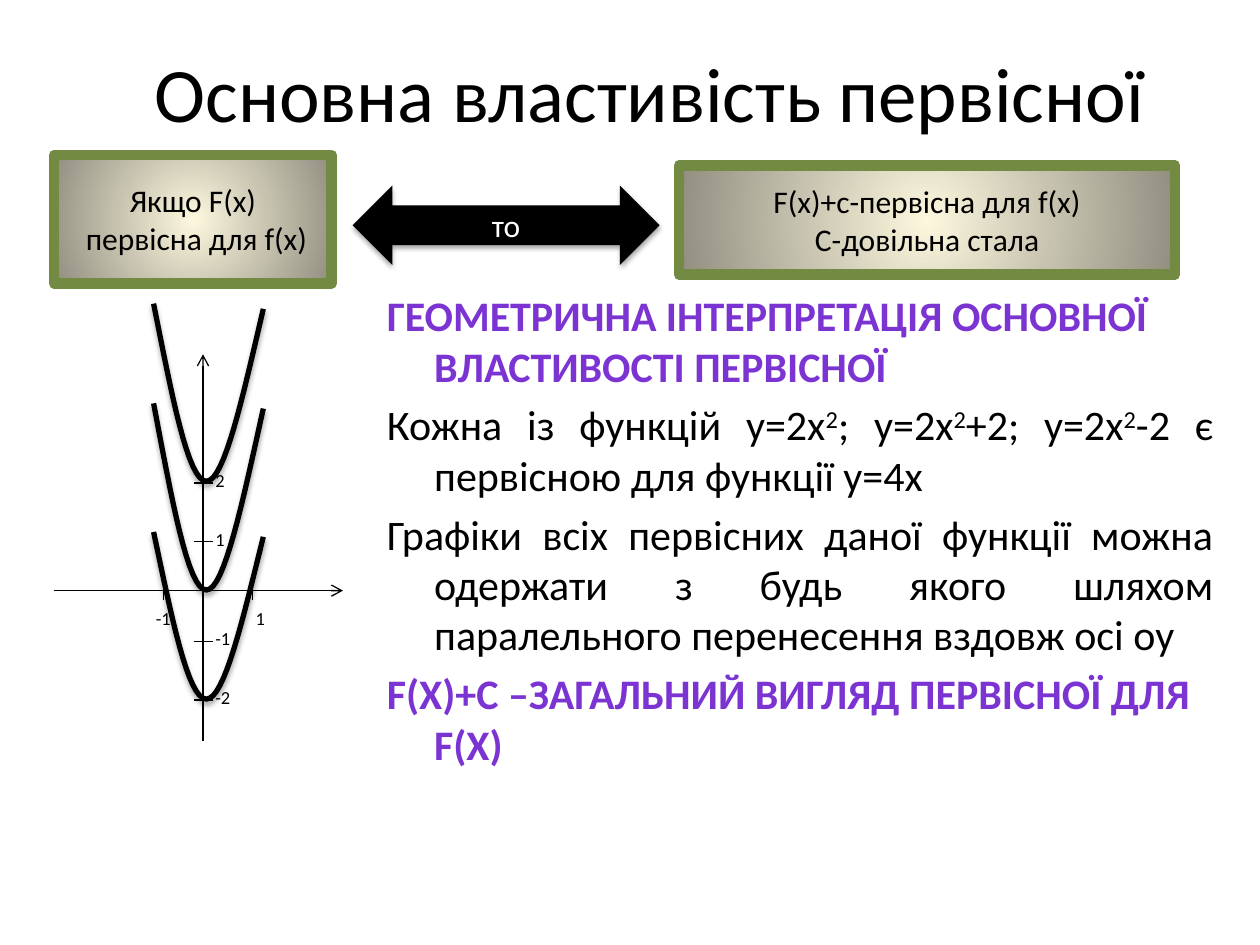
from dataclasses import dataclass

from lxml import etree
from pptx import Presentation
from pptx import util as u
from pptx.dml.color import RGBColor
from pptx.enum import shapes, text
from pptx.oxml.ns import qn

Pt = u.Pt


@dataclass(frozen=True)
class Theme:
    font: str = "Calibri"
    ink: str = "000000"
    paper: str = "FFFFFF"
    accent: str = "7B34D2"
    frame: str = "738A42"
    glow: str = "FCF7DD"
    edge: str = "918E81"
    title: float = 44
    body: float = 24
    box: float = 18
    label: float = 10.5


@dataclass(frozen=True)
class Area:
    left: float
    top: float
    width: float
    height: float

    def lengths(self) -> list:
        return [Pt(v) for v in (self.left, self.top, self.width, self.height)]


@dataclass(frozen=True)
class Statement:
    words: str  # pieces between bars alternate between normal and superscript
    heading: bool = False


@dataclass(frozen=True)
class Parabola:
    left_top: float
    vertex: float
    right_top: float


@dataclass(frozen=True)
class Tick:
    name: str
    place: float
    label_left: float


THEME = Theme()
AXIS_X, AXIS_Y = 116, 337.5
STATEMENTS = [
    Statement("ГЕОМЕТРИЧНА ІНТЕРПРЕТАЦІЯ ОСНОВНОЇ ВЛАСТИВОСТІ ПЕРВІСНОЇ", True),
    Statement("Кожна із функцій y=2x|2|; y=2x|2|+2; y=2x|2|-2 є первісною для функції y=4x"),
    Statement("Графіки всіх первісних даної функції можна одержати з будь якого "
              "шляхом паралельного перенесення вздовж осі оy"),
    Statement("F(X)+C –ЗАГАЛЬНИЙ ВИГЛЯД ПЕРВІСНОЇ ДЛЯ F(X)", True),
]
PARABOLAS = [Parabola(173.5, 275, 176.5), Parabola(230.5, 337.2, 233.5),
             Parabola(304, 399.5, 306.8)]
Y_TICKS = [Tick("2", 276, AXIS_X), Tick("1", 309.5, AXIS_X),
           Tick("-1", 366.5, AXIS_X), Tick("-2", 400, AXIS_X)]
X_TICKS = [Tick("-1", 93.5, 82), Tick("1", 144.5, 139)]


def style(para, size: float, color: str, bold: bool = False) -> None:
    for span in para.runs:
        span.font.name, span.font.size, span.font.bold = THEME.font, Pt(size), bold
        span.font.color.rgb = RGBColor.from_string(color)


def fill_text(shape, lines: list[str], size: float, color: str, align) -> None:
    frame = shape.text_frame
    frame.word_wrap = True
    frame.text = "\n".join(lines)
    for para in frame.paragraphs:
        para.alignment = align
        style(para, size, color)


def add_shadow(shape) -> None:
    shape.shadow.inherit = False
    effects = shape._element.spPr.find(qn("a:effectLst"))
    shadow = etree.SubElement(effects, qn("a:outerShdw"), blurRad=str(Pt(3.1)),
                              dist=str(Pt(1.8)), dir="5400000", rotWithShape="0")
    color = etree.SubElement(shadow, qn("a:srgbClr"), val=THEME.ink)
    etree.SubElement(color, qn("a:alpha"), val="35000")


def add_box(page, area: Area, lines: list[str]) -> None:
    box = page.shapes.add_shape(shapes.MSO_SHAPE.RECTANGLE, *area.lengths())
    box.shadow.inherit = False
    box.line.color.rgb = RGBColor.from_string(THEME.frame)
    box.line.width = Pt(6)
    box.fill.gradient()
    for stop, color in zip(box.fill.gradient_stops, (THEME.glow, THEME.edge)):
        stop.color.rgb = RGBColor.from_string(color)
    # Radial gradient from the centre
    gradient = box._element.spPr.find(qn("a:gradFill"))
    gradient.remove(gradient.find(qn("a:lin")))
    radial = etree.SubElement(gradient, qn("a:path"), path="circle")
    etree.SubElement(radial, qn("a:fillToRect"), l="50000", t="50000", r="50000", b="50000")
    box.text_frame.vertical_anchor = text.MSO_ANCHOR.MIDDLE
    fill_text(box, lines, THEME.box, THEME.ink, text.PP_ALIGN.CENTER)


def add_arrow(page, area: Area, word: str) -> None:
    arrow = page.shapes.add_shape(shapes.MSO_SHAPE.LEFT_RIGHT_ARROW, *area.lengths())
    arrow.fill.solid()
    arrow.fill.fore_color.rgb = RGBColor.from_string(THEME.ink)
    arrow.line.fill.background()
    add_shadow(arrow)
    arrow.text_frame.vertical_anchor = text.MSO_ANCHOR.MIDDLE
    fill_text(arrow, [word], THEME.box, THEME.paper, text.PP_ALIGN.CENTER)


def add_line(page, x1: float, y1: float, x2: float, y2: float, arrowhead: bool = False) -> None:
    line = page.shapes.add_connector(shapes.MSO_CONNECTOR.STRAIGHT,
                                     Pt(x1), Pt(y1), Pt(x2), Pt(y2))
    line.line.color.rgb = RGBColor.from_string(THEME.ink)
    line.line.width = Pt(0.75)
    properties = line._element.spPr
    if arrowhead:
        etree.SubElement(properties.find(qn("a:ln")), qn("a:tailEnd"), type="arrow")
    etree.SubElement(properties, qn("a:effectLst"))


def bezier(points: list[tuple], steps: int = 16) -> list[tuple]:
    weights = [((1 - t) ** 3, 3 * t * (1 - t) ** 2, 3 * t * t * (1 - t), t ** 3)
               for t in (i / steps for i in range(1, steps + 1))]
    return [tuple(Pt(sum(w * p[axis] for w, p in zip(row, points))) for axis in (0, 1))
            for row in weights]


def add_parabola(page, curve: Parabola) -> None:
    start, low, end = (87.8, curve.left_top), (118, curve.vertex), (150.5, curve.right_top)
    falling = [start, (98, (start[1] + low[1]) / 2), (107.3, low[1]), low]
    rising = [low, (128.3, low[1]), (139, (low[1] + end[1]) / 2), end]
    builder = page.shapes.build_freeform(Pt(start[0]), Pt(start[1]))
    builder.add_line_segments(bezier(falling) + bezier(rising), close=False)
    shape = builder.convert_to_shape()
    shape.fill.background()
    shape.line.color.rgb = RGBColor.from_string(THEME.ink)
    shape.line.width = Pt(3)
    add_shadow(shape)


def add_label(page, name: str, left: float, top: float) -> None:
    box = page.shapes.add_textbox(*Area(left, top, 22 if len(name) == 1 else 33, 20).lengths())
    fill_text(box, [name], THEME.label, THEME.ink, text.PP_ALIGN.LEFT)


def add_statements(page, area: Area) -> None:
    frame = page.shapes.add_textbox(*area.lengths()).text_frame
    frame.word_wrap = True
    for index, statement in enumerate(STATEMENTS):
        para = frame.add_paragraph() if index else frame.paragraphs[0]
        para.alignment = text.PP_ALIGN.LEFT if statement.heading else text.PP_ALIGN.JUSTIFY
        para.space_before = Pt(4.8 if index else 0)
        indents = para._p.get_or_add_pPr()
        indents.set("marL", str(Pt(27)))
        indents.set("indent", str(Pt(-27)))
        for number, piece in enumerate(statement.words.split("|")):
            span = para.add_run()
            span.text = piece
            if number % 2:
                span._r.get_or_add_rPr().set("baseline", "30000")
        style(para, THEME.body, THEME.accent if statement.heading else THEME.ink,
              statement.heading)


def main() -> None:
    deck = Presentation()
    deck.slide_width, deck.slide_height = Pt(720), Pt(540)
    page = deck.slides.add_slide(deck.slide_layouts[5])

    # Title and the property itself
    title = page.shapes.title
    title.left, title.top, title.width, title.height = Area(65.5, 21, 612, 62.5).lengths()
    title.text_frame.vertical_anchor = text.MSO_ANCHOR.MIDDLE
    fill_text(title, ["Основна властивість первісної"], THEME.title, THEME.ink,
              text.PP_ALIGN.CENTER)
    add_box(page, Area(31, 88.5, 158.5, 73.5), ["Якщо F(x)", " первісна для f(x)"])
    add_statements(page, Area(214, 162, 486.5, 378))
    add_arrow(page, Area(201.5, 106, 175.5, 45.5), "то")
    add_box(page, Area(388, 94.5, 283.5, 62.5), ["F(x)+c-первісна для f(x)", "C-довільна стала"])

    # Graph: axes, curves, ticks with labels
    add_line(page, AXIS_X, 423.5, AXIS_X, 202.5, arrowhead=True)
    add_line(page, 31, AXIS_Y, 196, AXIS_Y, arrowhead=True)
    for curve in PARABOLAS:
        add_parabola(page, curve)
    for tick in Y_TICKS:
        add_line(page, AXIS_X - 5, tick.place, AXIS_X + 5.5, tick.place)
        add_label(page, tick.name, tick.label_left, tick.place - 11.5)
    for tick in X_TICKS:
        add_line(page, tick.place, AXIS_Y - 5, tick.place, AXIS_Y + 5.5)
        add_label(page, tick.name, tick.label_left, AXIS_Y + 6)
    deck.save("out.pptx")


if __name__ == "__main__":
    main()
